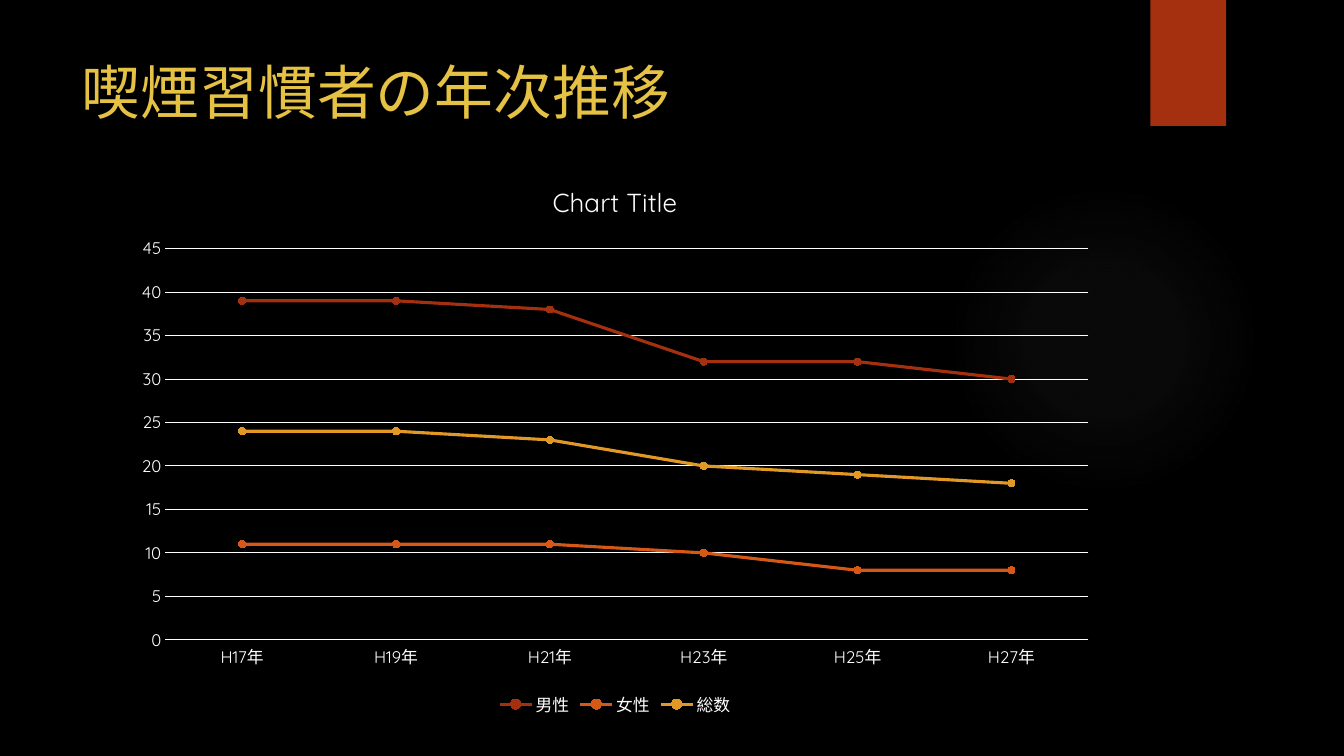
from lxml.etree import SubElement
from pptx import Presentation
from pptx.chart.data import CategoryChartData
from pptx.dml.color import RGBColor
from pptx.enum.chart import XL_CHART_TYPE as CT, XL_LEGEND_POSITION as LP
from pptx.enum.chart import XL_MARKER_STYLE as MS, XL_TICK_MARK as TM
from pptx.enum.shapes import MSO_SHAPE as SHAPE
from pptx.enum.text import MSO_ANCHOR as ANCHOR, PP_ALIGN as ALIGN
from pptx.oxml import parse_xml
from pptx.oxml.ns import nsdecls, qn
from pptx.util import Inches, Pt

WIDTH, HEIGHT = Inches(13.33), Inches(7.5)
FONT, WHITE = "Quicksand", "FFFFFF"
YEARS = [f"H{year}年" for year in range(17, 28, 2)]
SMOKERS = {
    "男性": ("A5300F", (39, 39, 38, 32, 32, 30)),
    "女性": ("D55816", (11, 11, 11, 10, 8, 8)),
    "総数": ("E19825", (24, 24, 23, 20, 19, 18)),
}


def rgb(code):
    """Turn a hex string into a colour."""
    return RGBColor.from_string(code)


def box(left, top, width, height):
    """Turn percentages of the slide into left, top, width and height."""
    return [int(share * side / 100) for share, side in
            zip((left, top, width, height), (WIDTH, HEIGHT) * 2)]


def apply(obj, values):
    """Set each attribute named in a dict of format values."""
    for name, value in values.items():
        setattr(obj, name, value)


def style_font(font, size, color=WHITE):
    """Give a font the slide's typeface, a size and a colour."""
    apply(font, {"name": FONT, "size": Pt(size), "bold": False})
    font.color.rgb = rgb(color)


def style_line(line, color, width):
    """Give a line a colour and a width."""
    line.color.rgb = rgb(color)
    line.width = Pt(width)


def paint(fill, color):
    """Fill with one solid colour."""
    fill.solid()
    fill.fore_color.rgb = rgb(color)


def add_block(slide, kind, area, color):
    """Add a plain filled shape without outline or shadow."""
    s = slide.shapes.add_shape(kind, *area)
    s.shadow.inherit = False
    paint(s.fill, color)
    s.line.fill.background()
    return s


def add_glow(slide, area, color, stops):
    """Add an ellipse that fades outwards through position and opacity stops."""
    s = add_block(slide, SHAPE.OVAL, area, color)
    grad = parse_xml(f'<a:gradFill {nsdecls("a")}><a:gsLst/><a:path path="circle">'
                     '<a:fillToRect l="50000" t="50000" r="50000" b="50000"/>'
                     '</a:path></a:gradFill>')
    for pos, alpha in stops:
        stop = SubElement(grad[0], qn("a:gs"), pos=str(pos * 1000))
        clr = SubElement(stop, qn("a:srgbClr"), val=color)
        SubElement(clr, qn("a:alpha"), val=str(alpha * 1000))
    solid = s.fill._xPr.find(qn("a:solidFill"))
    solid.getparent().replace(solid, grad)


def add_title(slide, text, area, size, color):
    """Place and format the title placeholder."""
    s = slide.shapes.title
    apply(s, dict(zip(("left", "top", "width", "height"), area)))
    tf = s.text_frame
    apply(tf, {"word_wrap": True, "vertical_anchor": ANCHOR.TOP})
    p = tf.paragraphs[0]
    p.alignment = ALIGN.LEFT
    r = p.add_run()
    r.text = text
    style_font(r.font, size, color)


def style_axes(chart):
    """Format both axes and the gridlines."""
    for axis in (chart.category_axis, chart.value_axis):
        apply(axis, {"major_tick_mark": TM.NONE, "minor_tick_mark": TM.NONE})
        style_font(axis.tick_labels.font, 12)
    style_line(chart.category_axis.format.line, WHITE, 0.75)
    value = chart.value_axis
    apply(value, {"minimum_scale": 0, "maximum_scale": 45, "major_unit": 5})
    value.format.line.fill.background()
    style_line(value.major_gridlines.format.line, WHITE, 0.75)


def style_series(series, color):
    """Format one line and its round markers."""
    series.smooth = False
    style_line(series.format.line, color, 2.25)
    apply(series.marker, {"style": MS.CIRCLE, "size": 5})
    paint(series.marker.format.fill, color)
    style_line(series.marker.format.line, color, 0.75)


def add_line_chart(slide, area, title, categories, table):
    """Add a line chart with a title, a legend and one line per table row."""
    data = CategoryChartData()
    data.categories = categories
    for name, (_, values) in table.items():
        data.add_series(name, values)
    chart = slide.shapes.add_chart(CT.LINE_MARKERS, *area, data).chart
    style_font(chart.font, 10)
    apply(chart, {"has_title": True, "has_legend": True})
    r = chart.chart_title.text_frame.paragraphs[0].add_run()
    r.text = title
    style_font(r.font, 18.6)
    apply(chart.legend, {"position": LP.BOTTOM, "include_in_layout": False})
    style_font(chart.legend.font, 12)
    style_axes(chart)
    plot = chart.plots[0]
    plot.vary_by_categories = False
    for series, (color, _) in zip(plot.series, table.values()):
        style_series(series, color)


def main():
    """Build the slide and save it."""
    prs = Presentation()
    apply(prs, {"slide_width": WIDTH, "slide_height": HEIGHT})
    slide = prs.slides.add_slide(prs.slide_layouts[5])
    paint(slide.background.fill, "000000")
    add_glow(slide, box(70.59, 24.4, 23.11, 41.07), "848484",
             [(0, 7), (36, 6), (69, 0)])
    add_block(slide, SHAPE.RECTANGLE, box(85.6, 0, 5.63, 16.67), "A5300F")
    add_title(slide, "喫煙習慣者の年次推移", box(5.33, 6.67, 77.19, 20.4),
              42, "E5C243")
    add_line_chart(slide, box(9.08, 21.47, 73.37, 73.87), "Chart Title",
                   YEARS, SMOKERS)
    prs.save("out.pptx")


if __name__ == "__main__":
    main()
